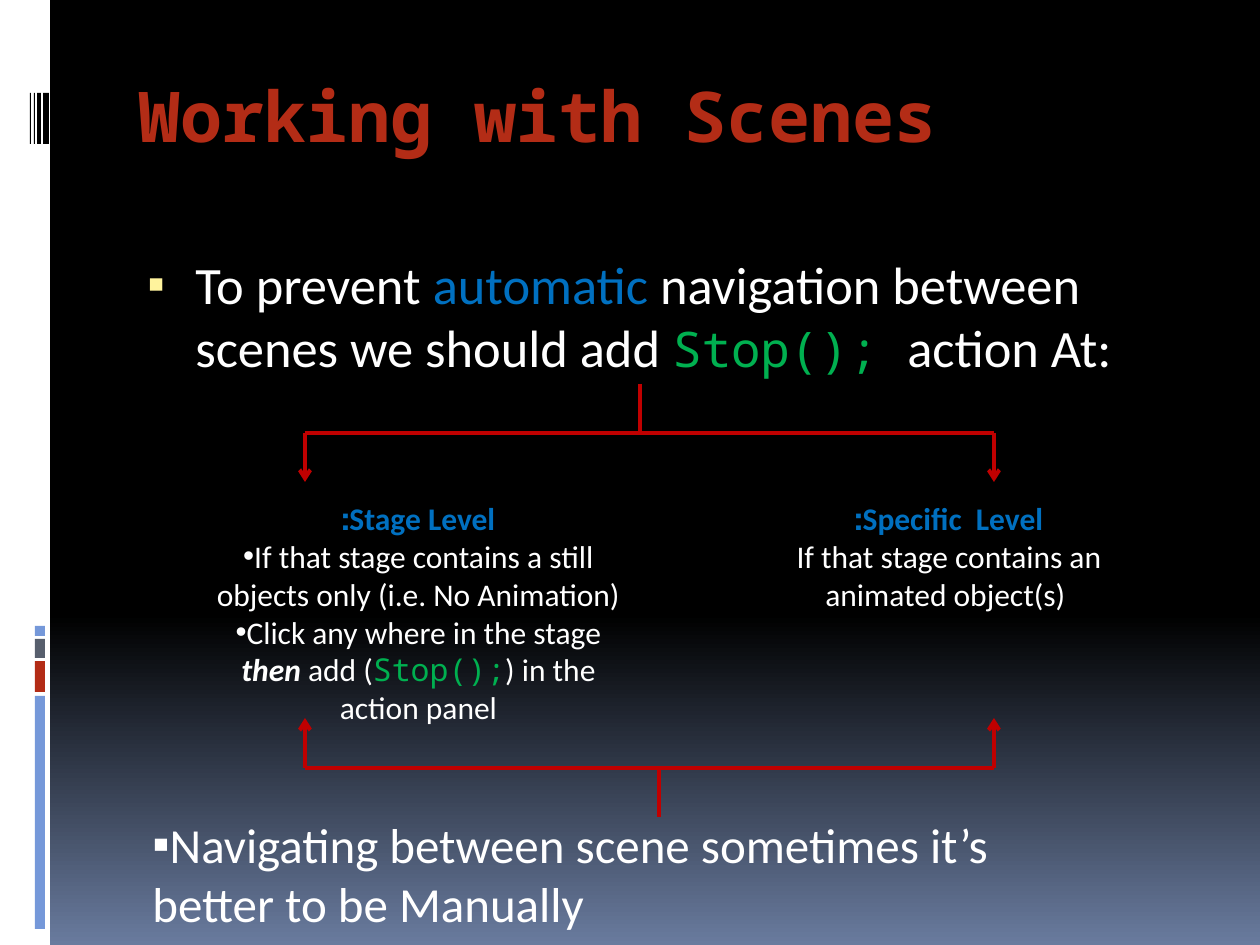
from lxml.etree import SubElement
from pptx import Presentation
from pptx.dml.color import RGBColor
from pptx.enum.shapes import MSO_CONNECTOR, MSO_SHAPE
from pptx.enum.text import PP_ALIGN
from pptx.oxml.ns import qn
from pptx.util import Emu, Pt

BLACK = RGBColor(0x00, 0x00, 0x00)
WHITE = RGBColor(0xFF, 0xFF, 0xFF)
SLATE = RGBColor(0x69, 0x7B, 0x9E)
SKY = RGBColor(0x75, 0x98, 0xD9)
GRAY = RGBColor(0x57, 0x5F, 0x6D)
RUST = RGBColor(0xB3, 0x2C, 0x16)
RED = RGBColor(0xC0, 0x00, 0x00)
BLUE = RGBColor(0x00, 0x70, 0xC0)
GREEN = RGBColor(0x00, 0xB0, 0x50)
YELLOW = RGBColor(0xFF, 0xF3, 0x9D)
SANS, MONO = "Calibri", "Noto Sans Mono"


def px(n):
    return Emu(round(n * 914400 / 126))


class Deck:
    """Draws styled elements on the current slide."""

    def __init__(self, width, height):
        self.prs = Presentation()
        self.prs.slide_width, self.prs.slide_height = px(width), px(height)
        self.s = self.prs.slides.add_slide(self.prs.slide_layouts[6])

    def background(self, stops):
        fill = self.s.background.fill
        fill.gradient()
        fill.gradient_angle = 270
        gs_list = self.s.element.xpath(".//a:gsLst")[0]
        for gs in list(gs_list):
            gs_list.remove(gs)
        for percent, color in stops:
            gs = SubElement(gs_list, qn("a:gs"), pos=str(percent * 1000))
            SubElement(gs, qn("a:srgbClr"), val=str(color))

    def bar(self, x, y, w, h, color):
        sp = self.s.shapes.add_shape(MSO_SHAPE.RECTANGLE, px(x), px(y), px(w), px(h))
        sp.shadow.inherit = False
        sp.fill.solid()
        sp.fill.fore_color.rgb = color
        sp.line.fill.background()

    def line(self, x1, y1, x2, y2, arrow=False):
        cx = self.s.shapes.add_connector(
            MSO_CONNECTOR.STRAIGHT, px(x1), px(y1), px(x2), px(y2))
        cx.line.color.rgb = RED
        cx.line.width = Pt(2.25)
        if arrow:
            SubElement(cx.line._get_or_add_ln(), qn("a:tailEnd"), type="arrow")
        SubElement(cx._element.spPr, qn("a:effectLst"))

    def bracket(self, stem_x, stem_y, bar_y, tip_y):
        left, right = 305, 994
        self.line(stem_x, stem_y, stem_x, bar_y)
        self.line(left, bar_y, right, bar_y)
        for x in (left, right):
            self.line(x, bar_y, x, tip_y, arrow=True)

    def textbox(self, x, y, w, h):
        tf = self.s.shapes.add_textbox(px(x), px(y), px(w), px(h)).text_frame
        tf.word_wrap = True
        return tf

    def paragraph(self, tf, size, *runs, align=PP_ALIGN.LEFT, rtl=False):
        p = tf.paragraphs[0]
        if p.runs:
            p = tf.add_paragraph()
        p.alignment = align
        if rtl:
            p._p.get_or_add_pPr().set("rtl", "1")
        for text, color, *style in runs:
            r = p.add_run()
            r.text = text
            r.font.size = Pt(28 if size == 30 and MONO in style else size)
            r.font.name = MONO if MONO in style else SANS
            r.font.color.rgb = color
            r.font.bold = "bold" in style
            r.font.italic = "italic" in style
        return p

    def bullet(self, p, char, margin=0, indent=0, color=None, percent=100):
        pPr = p._p.get_or_add_pPr()
        pPr.set("marL", str(px(margin)))
        pPr.set("indent", str(px(indent)))
        if color is not None:
            clr = SubElement(pPr, qn("a:buClr"))
            SubElement(clr, qn("a:srgbClr"), val=str(color))
        SubElement(pPr, qn("a:buSzPct"), val=str(percent * 1000))
        SubElement(pPr, qn("a:buFont"), typeface="Arial")
        SubElement(pPr, qn("a:buChar"), char=char)


def main():
    deck = Deck(1260, 945)
    deck.background([(0, BLACK), (65, BLACK), (100, SLATE)])

    deck.bar(0, 0, 50, 945, WHITE)
    for y, h, color in ((696, 233, SKY), (661, 31, RUST), (639, 19, GRAY), (626, 10, SKY)):
        deck.bar(35, y, 10, h, color)
    for x, w in ((43, 6), (37, 4), (34, 1), (30, 1)):
        deck.bar(x, 93, w, 51, BLACK)

    tf = deck.textbox(126, 66, 1071, 126)
    deck.paragraph(tf, 40, ("Working with Scenes", RUST, MONO, "bold"))

    tf = deck.textbox(126, 246, 1071, 140)
    p = deck.paragraph(
        tf, 30,
        ("To prevent ", WHITE),
        ("automatic", BLUE),
        (" navigation between  scenes we should add ", WHITE),
        ("Stop(); ", GREEN, MONO),
        ("action At:", WHITE))
    deck.bullet(p, "▪", 57, -48, YELLOW, 95)

    deck.bracket(640, 384, 433, 482)

    center = PP_ALIGN.CENTER
    tf = deck.textbox(197, 493, 443, 242)
    deck.paragraph(tf, 18, ("Stage Level:", BLUE, "bold"), align=center, rtl=True)
    p = deck.paragraph(
        tf, 18, ("If that stage contains a still objects only (i.e. No Animation)", WHITE),
        align=center)
    deck.bullet(p, "•")
    p = deck.paragraph(
        tf, 18,
        ("Click any where in the stage ", WHITE),
        ("then", WHITE, "bold", "italic"),
        (" add (", WHITE),
        ("Stop();", GREEN, MONO),
        (") in the action panel", WHITE),
        align=center)
    deck.bullet(p, "•")

    tf = deck.textbox(777, 493, 344, 127)
    deck.paragraph(tf, 18, ("Specific  Level:", BLUE, "bold"), align=center, rtl=True)
    deck.paragraph(
        tf, 18, ("If that stage contains an animated object(s) ", WHITE), align=center)

    deck.bracket(659, 817, 768, 718)

    tf = deck.textbox(140, 808, 963, 131)
    p = deck.paragraph(
        tf, 28, ("Navigating between scene sometimes it’s better to be Manually", WHITE))
    deck.bullet(p, "▪")

    deck.prs.save("out.pptx")


if __name__ == "__main__":
    main()
